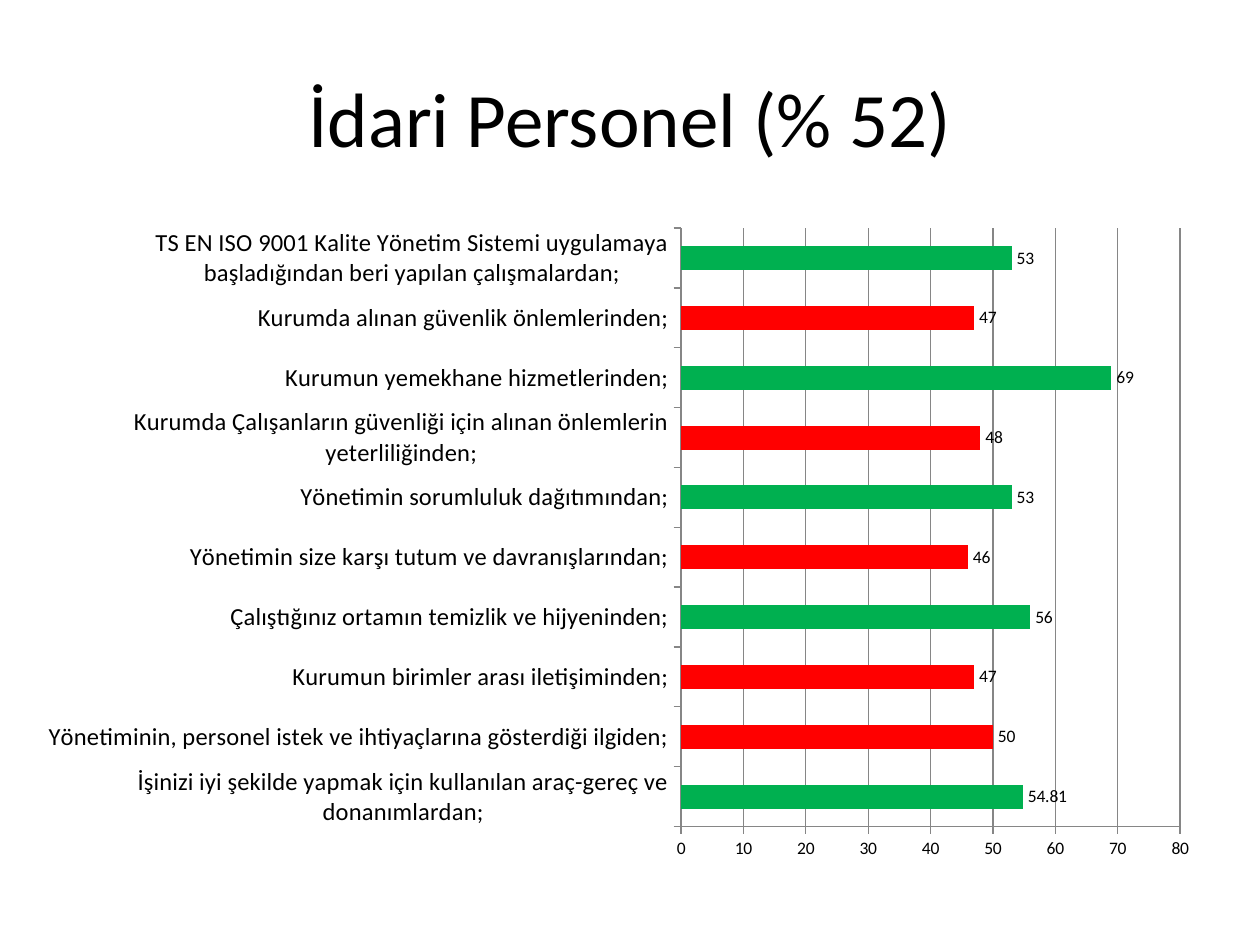
from lxml import etree
from pptx import Presentation
from pptx.chart.data import CategoryChartData
from pptx.dml.color import RGBColor
from pptx.enum.chart import XL_CHART_TYPE, XL_LABEL_POSITION, XL_TICK_MARK
from pptx.enum.text import MSO_ANCHOR, PP_ALIGN
from pptx.oxml.ns import qn
from pptx.util import Pt

BAR_CLUSTERED = XL_CHART_TYPE.BAR_CLUSTERED
OUTSIDE_END = XL_LABEL_POSITION.OUTSIDE_END
OUTSIDE = XL_TICK_MARK.OUTSIDE
MIDDLE = MSO_ANCHOR.MIDDLE
CENTER = PP_ALIGN.CENTER

BLACK = RGBColor(0x00, 0x00, 0x00)
RED = RGBColor(0xFF, 0x00, 0x00)
GREEN = RGBColor(0x00, 0xB0, 0x50)
GRAY = RGBColor(0x86, 0x86, 0x86)
FONT = "Calibri"
THRESHOLD = 50

SATISFACTION = [
    ("İşinizi iyi şekilde yapmak için kullanılan araç-gereç ve donanımlardan;", 54.81),
    ("Yönetiminin, personel istek ve ihtiyaçlarına gösterdiği ilgiden;", 50),
    ("Kurumun birimler arası iletişiminden;", 47),
    ("Çalıştığınız ortamın temizlik ve hijyeninden;", 56),
    ("Yönetimin size karşı tutum ve davranışlarından;", 46),
    ("Yönetimin sorumluluk dağıtımından;", 53),
    ("Kurumda Çalışanların güvenliği için alınan önlemlerin yeterliliğinden;", 48),
    ("Kurumun yemekhane hizmetlerinden;", 69),
    ("Kurumda alınan güvenlik önlemlerinden;", 47),
    ("TS EN ISO 9001 Kalite Yönetim Sistemi uygulamaya "
     "başladığından beri yapılan çalışmalardan;", 53),
]


def set_font(font, size):
    """Apply the slide's typeface and colour at the given size."""
    font.name = FONT
    font.size = Pt(size)
    font.bold = False
    font.color.rgb = BLACK


def add_title(slide, text):
    """Fill and place the title placeholder."""
    sp = slide.shapes.title
    sp.left, sp.top, sp.width, sp.height = Pt(36), Pt(21.6), Pt(648), Pt(90)
    tf = sp.text_frame
    tf.text = text
    tf.vertical_anchor = MIDDLE
    p = tf.paragraphs[0]
    p.alignment = CENTER
    set_font(p.runs[0].font, 44)


def set_plot_layout(frame, left, top, width, height):
    """Fix the inner plot area, measured from the chart's corner."""
    plot_area = frame.chart.element.find(".//" + qn("c:plotArea"))
    for old in plot_area.findall(qn("c:layout")):
        plot_area.remove(old)
    layout = etree.Element(qn("c:layout"))
    manual = etree.SubElement(layout, qn("c:manualLayout"))
    settings = [("layoutTarget", "inner"), ("xMode", "edge"), ("yMode", "edge"),
                ("x", left / frame.width), ("y", top / frame.height),
                ("w", width / frame.width), ("h", height / frame.height)]
    for tag, value in settings:
        etree.SubElement(manual, qn("c:" + tag)).set("val", str(value))
    plot_area.insert(0, layout)


def style_axis(axis, size):
    """Format an axis line, its ticks and its labels."""
    axis.major_tick_mark = OUTSIDE
    axis.format.line.color.rgb = GRAY
    axis.format.line.width = Pt(0.75)
    set_font(axis.tick_labels.font, size)


def style_bars(plot):
    """Colour bars by the threshold and show their values."""
    plot.gap_width = 150
    plot.vary_by_categories = False
    series = plot.series[0]
    series.invert_if_negative = False
    series.format.fill.solid()
    series.format.fill.fore_color.rgb = RED
    for i, value in enumerate(series.values):
        if value > THRESHOLD:
            fill = series.points[i].format.fill
            fill.solid()
            fill.fore_color.rgb = GREEN
    labels = series.data_labels
    labels.show_value = True
    labels.position = OUTSIDE_END
    labels.number_format = "General"
    labels.number_format_is_linked = False
    set_font(labels.font, 10)


def add_bar_chart(slide, rows):
    """Add the satisfaction bar chart."""
    data = CategoryChartData()
    data.categories = [name for name, _ in rows]
    data.add_series("Series 1", [value for _, value in rows])
    frame = slide.shapes.add_chart(
        BAR_CLUSTERED, Pt(14.4), Pt(122.4), Pt(679), Pt(375.8), data)
    chart = frame.chart
    chart.has_title = False
    chart.has_legend = False
    set_font(chart.font, 10)
    style_axis(chart.category_axis, 14)
    axis = chart.value_axis
    style_axis(axis, 10)
    axis.minimum_scale, axis.maximum_scale, axis.major_unit = 0, 80, 10
    axis.has_major_gridlines = True
    axis.major_gridlines.format.line.color.rgb = GRAY
    axis.major_gridlines.format.line.width = Pt(0.75)
    style_bars(chart.plots[0])
    set_plot_layout(frame, Pt(374.8), Pt(8), Pt(285.2), Pt(342))


def main():
    """Build the slide and save it."""
    prs = Presentation()
    prs.slide_width, prs.slide_height = Pt(720), Pt(540)
    slide = prs.slides.add_slide(prs.slide_layouts[5])
    add_title(slide, "İdari Personel (% 52)")
    add_bar_chart(slide, SATISFACTION)
    prs.save("out.pptx")


if __name__ == "__main__":
    main()
